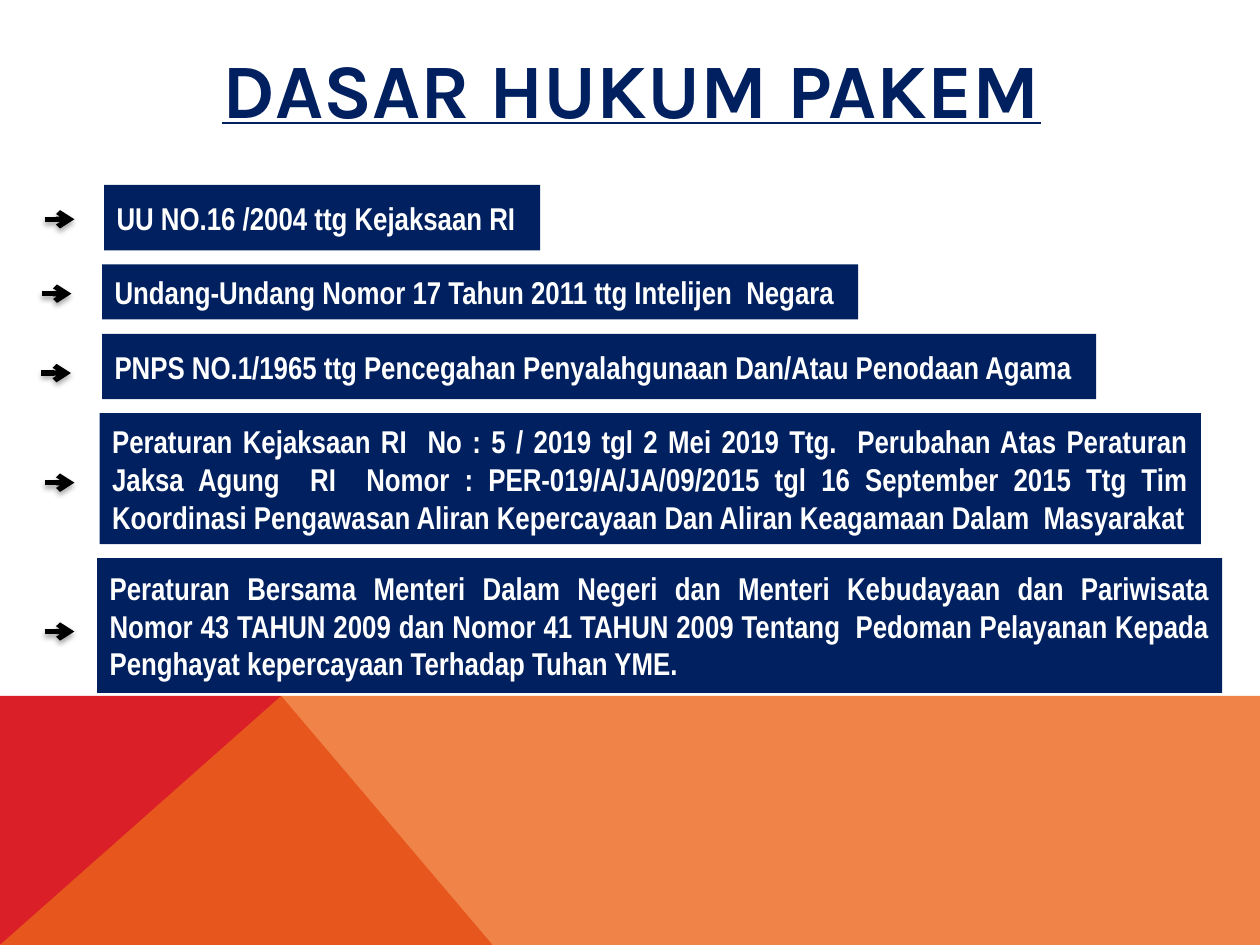
from dataclasses import dataclass

import pptx
import pptx.dml.color
import pptx.enum.shapes
import pptx.enum.text
import pptx.oxml
import pptx.oxml.ns
import pptx.util
from pptx.util import Cm


@dataclass(frozen=True)
class Theme:
    navy: str = "002060"
    white: str = "FFFFFF"
    black: str = "000000"
    red: str = "DA1F28"
    orange: str = "EB641B"
    orange_alpha: int = 80
    title_font: str = "Karla"
    body_font: str = "Arial Narrow"
    title_size: int = 44
    body_size: int = 18
    arrow_width: int = 3


@dataclass(frozen=True)
class LegalBasis:
    text: str
    left: float
    top: float
    width: float
    height: float
    arrow_left: float
    arrow_y: float


THEME = Theme()
ARROW_LENGTH = 0.6
SLIDE_WIDTH, SLIDE_HEIGHT = 25.4, 19.05
BAND_TOP, PEAK_X, SLOPE_END = 14.03, 5.67, 9.93

LEGAL_BASES = [
    LegalBasis("UU NO.16 /2004 ttg Kejaksaan RI", 2.1, 3.73, 8.79, 1.32, 0.9, 4.42),
    LegalBasis("Undang-Undang Nomor 17 Tahun 2011 ttg Intelijen  Negara",
               2.06, 5.33, 15.24, 1.11, 0.84, 5.92),
    LegalBasis("PNPS NO.1/1965 ttg Pencegahan Penyalahgunaan Dan/Atau Penodaan Agama",
               2.06, 6.73, 20.04, 1.32, 0.83, 7.52),
    LegalBasis("Peraturan Kejaksaan RI  No : 5 / 2019 tgl 2 Mei 2019 Ttg.  Perubahan Atas "
               "Peraturan Jaksa Agung  RI  Nomor : PER-019/A/JA/09/2015 tgl 16 September "
               "2015 Ttg Tim Koordinasi Pengawasan Aliran Kepercayaan Dan Aliran Keagamaan "
               "Dalam  Masyarakat", 2.01, 8.33, 22.2, 2.64, 0.9, 9.73),
    LegalBasis("Peraturan Bersama Menteri Dalam Negeri dan Menteri Kebudayaan dan "
               "Pariwisata\vNomor 43 TAHUN 2009 dan Nomor 41 TAHUN 2009 Tentang  Pedoman "
               "Pelayanan Kepada Penghayat kepercayaan Terhadap Tuhan YME.",
               1.96, 11.25, 22.68, 2.72, 0.9, 12.73),
]


def rgb(value: str) -> pptx.dml.color.RGBColor:
    return pptx.dml.color.RGBColor.from_string(value)


def add_xml(parent, tag: str, content: str = "", attributes: str = "") -> None:
    namespace = pptx.oxml.ns.nsdecls("a")
    parent.append(pptx.oxml.parse_xml(
        f"<a:{tag} {namespace} {attributes}>{content}</a:{tag}>"))


def style_text(frame, font_name: str, size: int, color: str, alignment) -> None:
    frame.word_wrap = True
    frame.vertical_anchor = pptx.enum.text.MSO_ANCHOR.MIDDLE
    for para in frame.paragraphs:
        para.alignment = alignment
        for span in para.runs:
            span.font.name = font_name
            span.font.size = pptx.util.Pt(size)
            span.font.bold = True
            span.font.color.rgb = rgb(color)


def paint(shape, color: str) -> None:
    shape.shadow.inherit = False
    shape.fill.solid()
    shape.fill.fore_color.rgb = rgb(color)
    shape.line.fill.background()


def add_polygon(page, points: list[tuple[float, float]], color: str):
    start, *others = [(Cm(x), Cm(y)) for x, y in points]
    builder = page.shapes.build_freeform(*start)
    builder.add_line_segments(others, close=True)
    polygon = builder.convert_to_shape()
    paint(polygon, color)
    return polygon


def add_footer_band(page) -> None:
    add_polygon(page, [(0, SLIDE_HEIGHT), (0, BAND_TOP), (PEAK_X, BAND_TOP),
                       (SLOPE_END, SLIDE_HEIGHT)], THEME.red)
    overlay = add_polygon(page, [(0, SLIDE_HEIGHT), (PEAK_X, BAND_TOP),
                                 (SLIDE_WIDTH, BAND_TOP),
                                 (SLIDE_WIDTH, SLIDE_HEIGHT)], THEME.orange)
    color = overlay.fill._xPr.find(".//" + pptx.oxml.ns.qn("a:srgbClr"))
    add_xml(color, "alpha", attributes=f'val="{THEME.orange_alpha * 1000}"')


def add_title(page, text: str) -> None:
    title = page.shapes.title
    title.left, title.top, title.width, title.height = Cm(2.29), Cm(1), Cm(20.88), Cm(1.52)
    title.text_frame.text = text
    style_text(title.text_frame, THEME.title_font, THEME.title_size, THEME.navy,
               pptx.enum.text.PP_ALIGN.CENTER)
    title.text_frame.paragraphs[0].runs[0].font.underline = True


def add_box(page, basis: LegalBasis) -> None:
    box = page.shapes.add_shape(
        pptx.enum.shapes.MSO_SHAPE.RECTANGLE,
        Cm(basis.left), Cm(basis.top), Cm(basis.width), Cm(basis.height))
    paint(box, THEME.navy)
    box.text_frame.text = basis.text
    style_text(box.text_frame, THEME.body_font, THEME.body_size, THEME.white,
               pptx.enum.text.PP_ALIGN.JUSTIFY)


def add_arrow(page, left: float, y: float) -> None:
    arrow = page.shapes.add_connector(
        pptx.enum.shapes.MSO_CONNECTOR.STRAIGHT,
        Cm(left), Cm(y), Cm(left + ARROW_LENGTH), Cm(y))
    arrow.line.color.rgb = rgb(THEME.black)
    arrow.line.width = pptx.util.Pt(THEME.arrow_width)
    add_xml(arrow.line._get_or_add_ln(), "tailEnd", attributes='type="arrow"')
    shadow = (f'<a:outerShdw blurRad="39400" dist="22900" dir="5400000" rotWithShape="0">'
              f'<a:srgbClr val="{THEME.black}"><a:alpha val="35000"/></a:srgbClr>'
              f'</a:outerShdw>')
    add_xml(arrow._element.spPr, "effectLst", shadow)


def main() -> None:
    deck = pptx.Presentation()
    deck.slide_width, deck.slide_height = Cm(SLIDE_WIDTH), Cm(SLIDE_HEIGHT)
    page = deck.slides.add_slide(deck.slide_layouts.get_by_name("Title Only"))
    add_footer_band(page)
    add_title(page, "DASAR HUKUM PAKEM")
    for basis in LEGAL_BASES:
        add_box(page, basis)
        add_arrow(page, basis.arrow_left, basis.arrow_y)
    deck.save("out.pptx")


if __name__ == "__main__":
    main()
